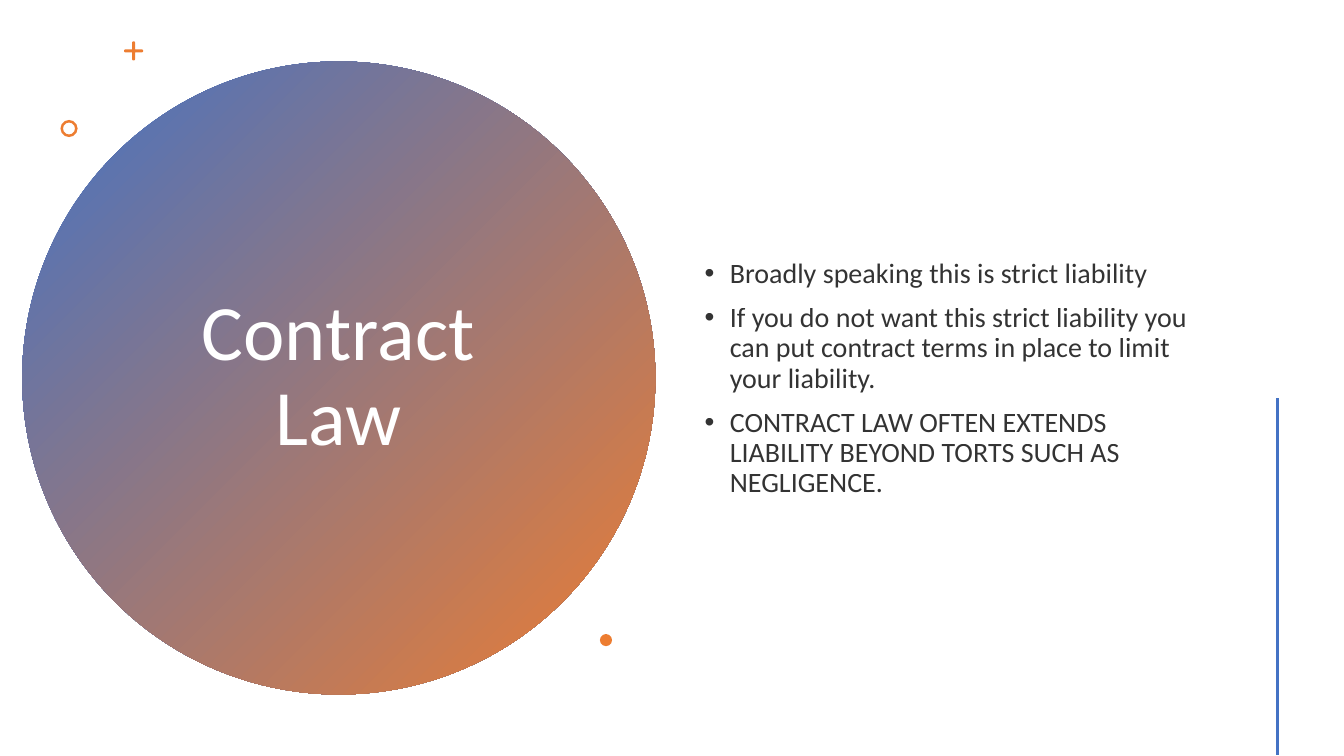
from math import cos, pi, sin

from lxml import etree
from pptx import Presentation
from pptx.dml.color import RGBColor
from pptx.enum.shapes import MSO_CONNECTOR as LINE, MSO_SHAPE as SHAPE
from pptx.enum.text import MSO_ANCHOR as ANCHOR, PP_ALIGN as ALIGN
from pptx.oxml.ns import qn
from pptx.util import Pt

PX = 9144
BLUE, ORANGE, WHITE, BLACK = "4472C4", "ED7D31", "FFFFFF", "000000"
POINTS = [
    "Broadly speaking this is strict liability",
    "If you do not want this strict liability you can put contract terms in place to limit your liability.",
    "CONTRACT LAW OFTEN EXTENDS LIABILITY BEYOND TORTS SUCH AS NEGLIGENCE.",
]


def px(*lengths):
    """Turn pixel lengths into EMU."""
    return [round(length * PX) for length in lengths]


def paint(color, value):
    """Set a colour from a hex string."""
    color.rgb = RGBColor.from_string(value)


def finish(shape, color):
    """Give a shape a flat fill with no outline or shadow."""
    shape.fill.solid()
    paint(shape.fill.fore_color, color)
    shape.line.fill.background()
    shape.shadow.inherit = False


def add_accent(slide, kind, box, color):
    """Add a flat preset shape in the box."""
    accent = slide.shapes.add_shape(kind, *px(*box))
    finish(accent, color)
    return accent


def add_plus(slide, left, top, size, thickness):
    """Draw a plus sign with rounded arm ends."""
    center_x, center_y = left + size / 2, top + size / 2
    radius = thickness / 2
    reach = size / 2 - radius
    outline = []
    for quarter in range(4):
        turn = quarter * pi / 2
        bends = [pi * step / 8 - pi / 2 for step in range(9)]
        arm = [(reach + radius * cos(bend), radius * sin(bend)) for bend in bends]
        for x, y in arm + [(radius, radius)]:
            outline.append(px(center_x + x * cos(turn) - y * sin(turn),
                              center_y + x * sin(turn) + y * cos(turn)))
    builder = slide.shapes.build_freeform(*outline[0], scale=1.0)
    builder.add_line_segments(outline[1:], close=True)
    finish(builder.convert_to_shape(), ORANGE)


def add_text(slide, box, paragraphs, size, color):
    """Add a vertically centred text block and return its paragraphs."""
    frame = slide.shapes.add_textbox(*px(*box)).text_frame
    frame.word_wrap = True
    frame.vertical_anchor = ANCHOR.MIDDLE
    frame.text = "\n".join(paragraphs)
    for paragraph in frame.paragraphs:
        paragraph.line_spacing = 0.9
        font = paragraph.runs[0].font
        font.name, font.size = "Calibri", Pt(size)
        paint(font.color, color)
    return frame.paragraphs


def add_title_circle(slide, left, top, size):
    """Place the gradient circle, its title and the small accents around it."""
    circle = add_accent(slide, SHAPE.OVAL, (left, top, size, size), BLUE)
    circle.fill.gradient()
    circle.fill.gradient_angle = 315
    for stop, color, position in zip(circle.fill.gradient_stops, (BLUE, ORANGE), (0, 1)):
        paint(stop.color, color)
        stop.position = position
    title_box = (left + 114, top + 80, 399, 467)
    title, = add_text(slide, title_box, ["Contract Law"], 56, WHITE)
    title.alignment = ALIGN.CENTER
    add_plus(slide, left + 101, top - 20, 19, 3)
    ring = add_accent(slide, SHAPE.DONUT, (left + 38, top + 58, 17, 17), ORANGE)
    ring.adjustments[0] = 0.15
    add_accent(slide, SHAPE.OVAL, (left + 573, top + 568, 12, 12), ORANGE)


def add_bullets(slide, box):
    """Place the bulleted points in the box."""
    for point in add_text(slide, box, POINTS, 20, BLACK):
        point.space_before = Pt(10)
        props = point._p.get_or_add_pPr()
        indent, = px(25)
        props.set("marL", str(indent))
        props.set("indent", str(-indent))
        etree.SubElement(props, qn("a:buFont"), typeface="Arial")
        etree.SubElement(props, qn("a:buChar"), char="•")
        for tint in point._p.iter(qn("a:srgbClr")):
            etree.SubElement(tint, qn("a:alpha"), val="80000")


def add_side_rule(slide, x, top, bottom):
    """Draw the vertical rule at the right edge."""
    rule = slide.shapes.add_connector(LINE.STRAIGHT, *px(x, top, x, bottom))
    paint(rule.line.color, BLUE)
    rule.line.width = Pt(2)
    etree.SubElement(rule._element.spPr, qn("a:effectLst"))


def main():
    """Build and save the slide."""
    deck = Presentation()
    deck.slide_width, deck.slide_height = px(1333, 750)
    slide = deck.slides.add_slide(deck.slide_layouts[6])
    add_title_circle(slide, 22, 61, 628)
    add_bullets(slide, (689, 57, 522, 638))
    add_side_rule(slide, 1267, 395, 749)
    deck.save("out.pptx")


if __name__ == "__main__":
    main()
